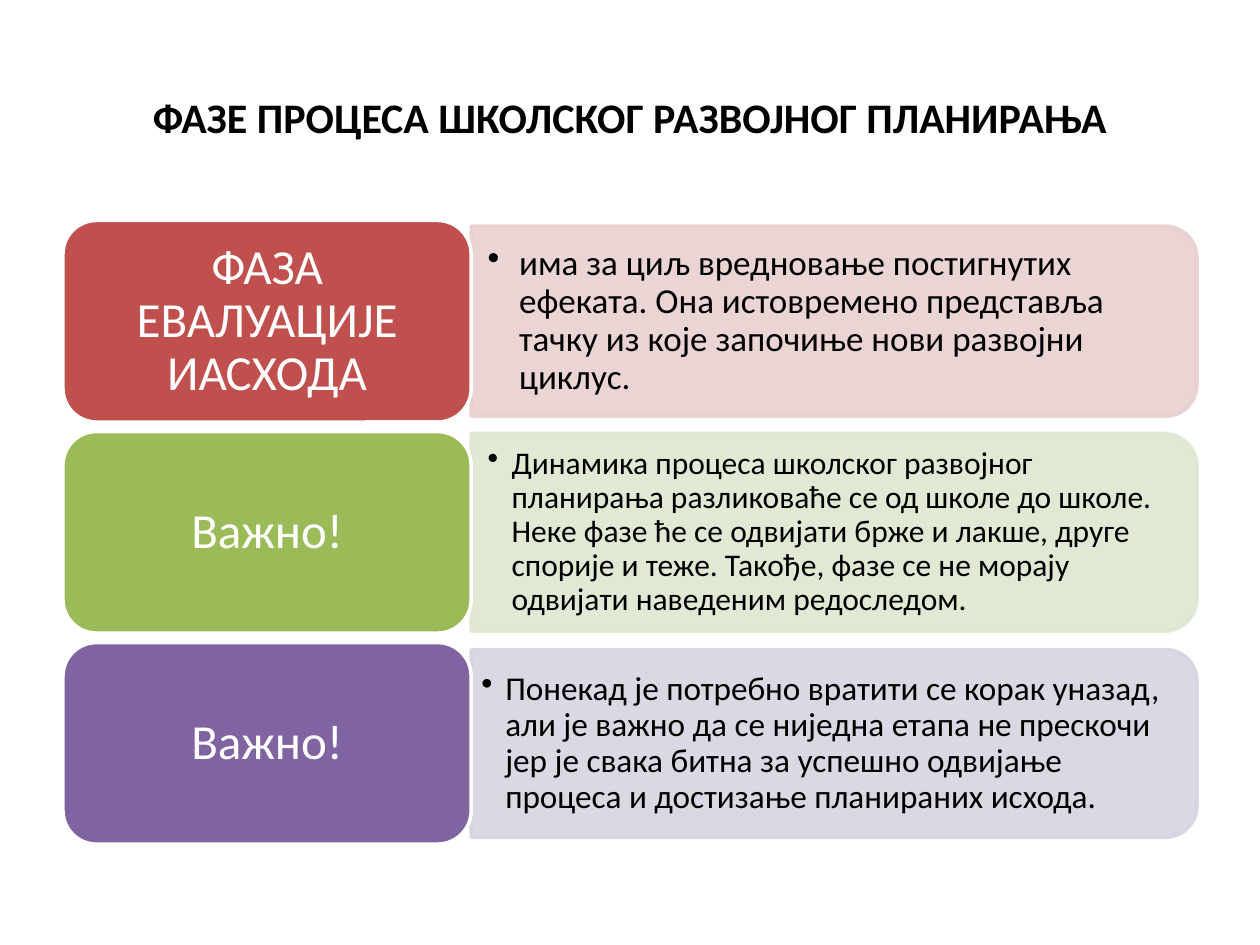
"""Build a slide on the phases of school development planning."""
from dataclasses import dataclass

from lxml.etree import SubElement
from pptx import Presentation
from pptx.dml.color import RGBColor
from pptx.enum.shapes import MSO_SHAPE
from pptx.enum.text import MSO_ANCHOR, PP_ALIGN
from pptx.oxml.ns import qn
from pptx.util import Inches, Pt


@dataclass(frozen=True)
class Theme:
    font: str = "Calibri"
    black: str = "000000"
    white: str = "FFFFFF"
    dark: tuple = ("C0504D", "9BBB59", "8064A2")
    pale: tuple = ("E8D0D0", "DEE7D1", "D8D3E0")
    title: int = 24
    label: int = 28
    body: tuple = (20, 18, 19)


def write(shape, text, size, color, pad, align, bold=False):
    frame = shape.text_frame
    frame.word_wrap = True
    frame.vertical_anchor = MSO_ANCHOR.MIDDLE
    frame.margin_left = frame.margin_right = Inches(pad[0])
    frame.margin_top = frame.margin_bottom = Inches(pad[1])
    frame.text = text
    par = frame.paragraphs[0]
    par.alignment = align
    par.line_spacing = 0.9
    font = par.runs[0].font
    font.name, font.size, font.bold = theme.font, Pt(size), bold
    font.color.rgb = RGBColor.from_string(color)
    return par


def paint(shape, fill, line):
    shape.shadow.inherit = False
    shape.fill.solid()
    shape.fill.fore_color.rgb = RGBColor.from_string(fill)
    shape.line.color.rgb = RGBColor.from_string(line)
    shape.line.width = Pt(2)


theme = Theme()
rows = [
    ("ФАЗА ЕВАЛУАЦИЈЕ ИАСХОДА",
     "има за циљ вредновање постигнутих ефеката. Она истовремено представља "
     "тачку из које започиње нови развојни циклус.", 1.51, 0.25, (0.13, 0.06)),
    ("Важно!",
     "Динамика процеса школског развојног планирања разликоваће се од школе до "
     "школе. Неке фазе ће се одвијати брже и лакше, друге спорије и теже. "
     "Такође, фазе се не морају одвијати наведеним редоследом.",
     1.57, 0.19, (0.13, 0.06)),
    ("Важно!",
     "Понекад је потребно вратити се корак уназад, али је важно да се ниједна "
     "етапа не прескочи јер је свака битна за успешно одвијање процеса и "
     "достизање планираних исхода.", 1.49, 0.19, (0.08, 0.04)),
]
left, wide, tall, pitch, top = 0.5, 3.24, 1.6, 1.675, 1.75
edge, span = left + wide, 5.76

deck = Presentation()
deck.slide_width, deck.slide_height = Inches(10), Inches(7.5)
slide = deck.slides.add_slide(deck.slide_layouts[6])
shapes = slide.shapes

title = shapes.add_textbox(Inches(0.5), Inches(0.3), Inches(9), Inches(1.25))
head = write(title, "ФАЗЕ ПРОЦЕСА ШКОЛСКОГ РАЗВОЈНОГ ПЛАНИРАЊА", theme.title,
             theme.black, (0.1, 0.05), PP_ALIGN.CENTER, True)
head.line_spacing = 1.0

for i, (name, note, high, dent, pad) in enumerate(rows):
    mid = top + tall / 2 + i * pitch

    panel = shapes.add_shape(
        MSO_SHAPE.ROUND_2_SAME_RECTANGLE, Inches(edge + (span - high) / 2),
        Inches(mid - span / 2), Inches(high), Inches(span))
    panel.rotation = 90
    paint(panel, theme.pale[i], theme.pale[i])
    for tint in panel._element.spPr.iter(qn("a:srgbClr")):
        SubElement(tint, qn("a:alpha"), val="90000")

    body = shapes.add_textbox(Inches(edge), Inches(mid - high / 2 + 0.07),
                              Inches(5.69), Inches(high - 0.14))
    par = write(body, note, theme.body[i], theme.black, pad, PP_ALIGN.LEFT)
    props = par._p.get_or_add_pPr()
    props.set("marL", str(Inches(dent)))
    props.set("indent", str(-Inches(dent)))
    SubElement(props, qn("a:buChar"), char="•")

    label = shapes.add_shape(
        MSO_SHAPE.ROUNDED_RECTANGLE, Inches(left), Inches(mid - tall / 2),
        Inches(wide), Inches(tall))
    paint(label, theme.dark[i], theme.white)
    write(label, name, theme.label, theme.white, (0.12, 0.06), PP_ALIGN.CENTER)

deck.save("out.pptx")
